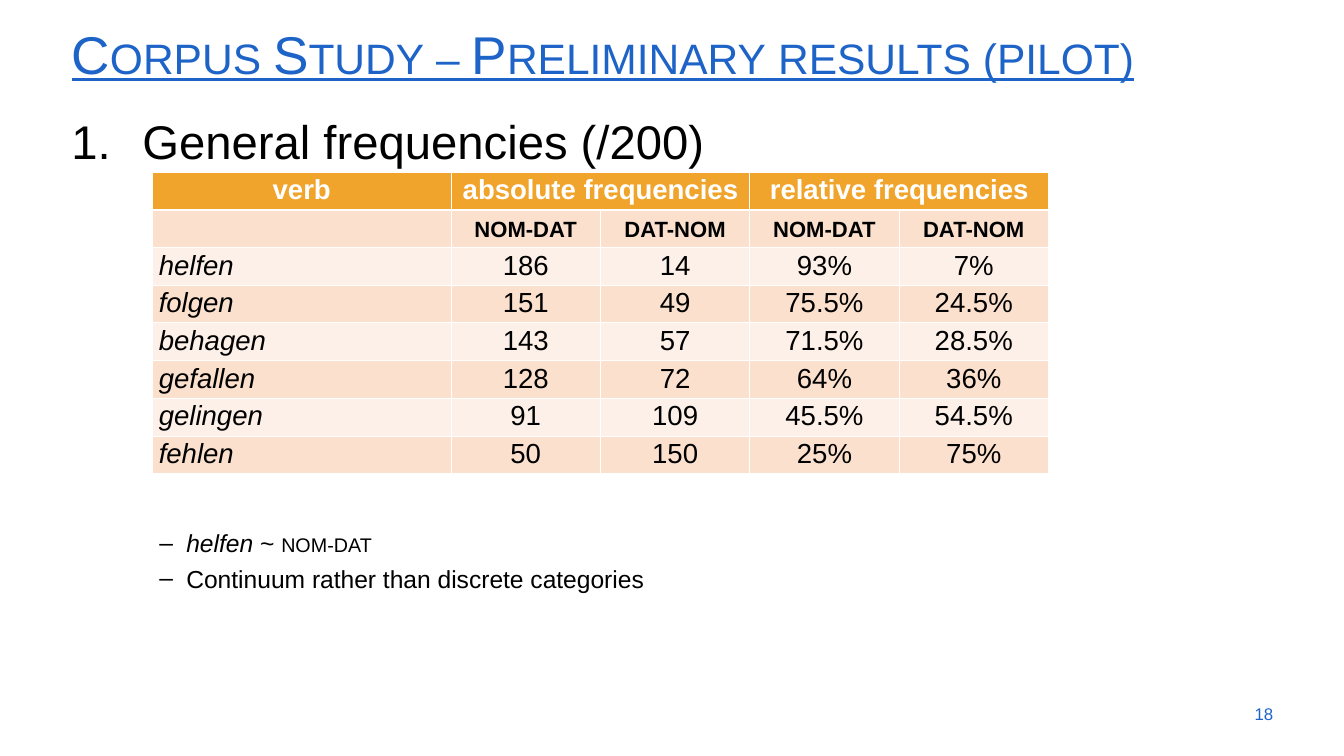
from dataclasses import dataclass

import pptx
import pptx.dml.color
import pptx.enum.text
import pptx.oxml.ns
import pptx.util
from lxml import etree

RGBColor = pptx.dml.color.RGBColor
Align = pptx.enum.text.PP_ALIGN
Anchor = pptx.enum.text.MSO_ANCHOR
qn = pptx.oxml.ns.qn

BLUE = RGBColor(0x1E, 0x64, 0xC8)
BLACK = RGBColor(0x00, 0x00, 0x00)
WHITE = RGBColor(0xFF, 0xFF, 0xFF)
GOLD = RGBColor(0xF1, 0xA4, 0x2B)
PEACH = RGBColor(0xFA, 0xE0, 0xCD)
CREAM = RGBColor(0xFC, 0xF0, 0xE8)

FONT = "Arial"
WIDE = pptx.util.Inches(18.96)
HIGH = pptx.util.Inches(10.67)


@dataclass(frozen=True)
class Box:
    """A place on the slide, in percent of its width and height."""
    left: float
    top: float
    width: float
    height: float

    def emu(self) -> tuple[int, int, int, int]:
        return (int(WIDE * self.left / 100), int(HIGH * self.top / 100),
                int(WIDE * self.width / 100), int(HIGH * self.height / 100))


@dataclass(frozen=True)
class Style:
    size: float
    color: RGBColor = BLACK
    bold: bool = False
    italic: bool = False
    line: bool = False
    small: bool = False


@dataclass(frozen=True)
class Verb:
    name: str
    nom: str
    dat: str
    nom_share: str
    dat_share: str


TITLE = Box(4.8, 2.62, 90.6, 8.81)
BODY = Box(4.8, 12.28, 90.56, 68.6)
TABLE = Box(11.34, 22.77, 66.67, 39.9)
NOTES = Box(11.34, 68.42, 66.67, 9.93)
NUMBER = Box(89.93, 91.75, 5.33, 5.34)

HEAD = Style(28, WHITE, bold=True)
ORDER = Style(28, bold=True, small=True)
NAME = Style(28, italic=True)
VALUE = Style(28)
NOTE = Style(25)

VERBS = [
    Verb("helfen", "186", "14", "93%", "7%"),
    Verb("folgen", "151", "49", "75.5%", "24.5%"),
    Verb("behagen", "143", "57", "71.5%", "28.5%"),
    Verb("gefallen", "128", "72", "64%", "36%"),
    Verb("gelingen", "91", "109", "45.5%", "54.5%"),
    Verb("fehlen", "50", "150", "25%", "75%"),
]
HEADS = {0: "verb", 1: "absolute frequencies", 3: "relative frequencies"}
UNITS = [2, 1, 1, 1, 1]


def add_run(para, text: str, style: Style) -> None:
    run = para.add_run()
    run.text = text
    font = run.font
    font.name = FONT
    font.size = pptx.util.Pt(style.size)
    font.color.rgb = style.color
    font.bold = style.bold
    font.italic = style.italic
    font.underline = style.line
    if style.small:
        run._r.get_or_add_rPr().set("cap", "small")


def add_mark(para, indent: float, tag: str, **mark: str) -> None:
    """Hang a bullet or number before the paragraph."""
    props = para._p.get_or_add_pPr()
    props.set("marL", str(pptx.util.Inches(indent)))
    props.set("indent", str(-pptx.util.Inches(indent)))
    etree.SubElement(props, qn("a:buFont"), typeface=FONT)
    etree.SubElement(props, qn(tag), **mark)
    para.line_spacing = 1.2


def set_frame(frame, inset: float, anchor=Anchor.TOP) -> None:
    frame.word_wrap = True
    frame.auto_size = pptx.enum.text.MSO_AUTO_SIZE.NONE
    frame.vertical_anchor = anchor
    frame.margin_top = frame.margin_bottom = pptx.util.Inches(inset)


def add_box(slide, box: Box, inset: float, anchor=Anchor.TOP):
    frame = slide.shapes.add_textbox(*box.emu()).text_frame
    set_frame(frame, inset, anchor)
    return frame


def add_edges(cell, top: float, bottom: float) -> None:
    """Draw the white cell borders; widths are in points."""
    props = cell._tc.get_or_add_tcPr()
    for side, width in (("L", 1), ("R", 1), ("T", top), ("B", bottom)):
        edge = etree.SubElement(props, qn(f"a:ln{side}"), w=str(pptx.util.Pt(width)))
        fill = etree.SubElement(edge, qn("a:solidFill"))
        etree.SubElement(fill, qn("a:srgbClr"), val=str(WHITE))


def fill_cell(cell, row: int, text: str, style: Style, align) -> None:
    add_edges(cell, 3 if row == 1 else 1, 3 if row == 0 else 1)
    cell.fill.solid()
    cell.fill.fore_color.rgb = GOLD if row == 0 else PEACH if row % 2 else CREAM
    cell.margin_left = cell.margin_right = pptx.util.Inches(0.09)
    cell.margin_top = cell.margin_bottom = pptx.util.Inches(0.04)
    para = cell.text_frame.paragraphs[0]
    para.alignment = align
    if text:
        add_run(para, text, style)


def add_counts(slide) -> None:
    rows = len(VERBS) + 2
    table = slide.shapes.add_table(rows, len(UNITS), *TABLE.emu()).table
    table.first_row = table.horz_banding = False
    unit = TABLE.emu()[2] / sum(UNITS)
    for col, share in zip(table.columns, UNITS):
        col.width = int(unit * share)
    for row in table.rows:
        row.height = TABLE.emu()[3] // rows
    for left in (1, 3):
        table.cell(0, left).merge(table.cell(0, left + 1))
    for col in range(len(UNITS)):
        fill_cell(table.cell(0, col), 0, HEADS.get(col, ""), HEAD, Align.CENTER)
        label = ("dat-nom", "nom-dat")[col % 2] if col else ""
        fill_cell(table.cell(1, col), 1, label, ORDER, Align.CENTER)
    for row, verb in enumerate(VERBS, 2):
        fill_cell(table.cell(row, 0), row, verb.name, NAME, Align.LEFT)
        values = (verb.nom, verb.dat, verb.nom_share, verb.dat_share)
        for col, value in enumerate(values, 1):
            fill_cell(table.cell(row, col), row, value, VALUE, Align.CENTER)


def add_title(slide) -> None:
    title = slide.shapes.title
    title.left, title.top, title.width, title.height = TITLE.emu()
    set_frame(title.text_frame, 0.12)
    para = title.text_frame.paragraphs[0]
    para.alignment = Align.LEFT
    para.line_spacing = 0.9
    add_run(para, "Corpus Study – Preliminary results (pilot)",
            Style(54, BLUE, line=True, small=True))


def add_notes(slide) -> None:
    frame = add_box(slide, NOTES, 0.07)
    lines = [
        [("helfen", Style(25, italic=True)), (" ~ ", NOTE),
         ("nom-dat", Style(25, small=True))],
        [("Continuum rather than discrete categories", NOTE)],
    ]
    for index, line in enumerate(lines):
        para = frame.add_paragraph() if index else frame.paragraphs[0]
        add_mark(para, 0.38, "a:buChar", char="–")
        for text, style in line:
            add_run(para, text, style)


def main() -> None:
    deck = pptx.Presentation()
    deck.slide_width, deck.slide_height = WIDE, HIGH
    slide = deck.slides.add_slide(deck.slide_layouts[5])
    add_title(slide)
    para = add_box(slide, BODY, 0.12).paragraphs[0]
    add_mark(para, 1, "a:buAutoNum", type="arabicPeriod")
    add_run(para, "General frequencies (/200)", Style(48))
    add_counts(slide)
    add_notes(slide)
    para = add_box(slide, NUMBER, 0.05, Anchor.MIDDLE).paragraphs[0]
    para.alignment = Align.RIGHT
    add_run(para, "18", Style(17.1, BLUE))
    deck.save("out.pptx")


if __name__ == "__main__":
    main()
